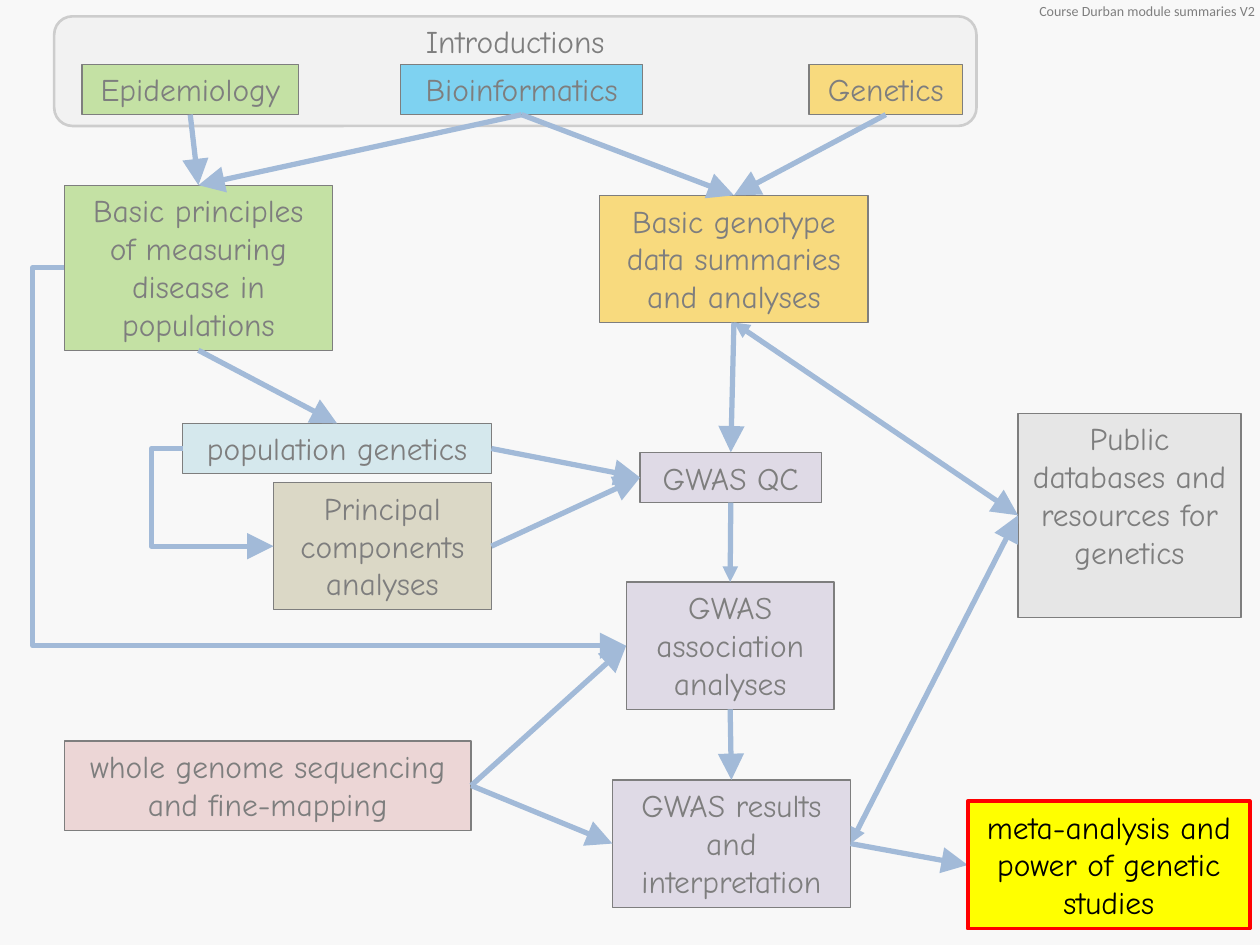
"""Build a flow chart of the modules of a genetics course."""
from lxml import etree
from pptx import Presentation
from pptx.dml.color import RGBColor
from pptx.enum.shapes import MSO_CONNECTOR, MSO_SHAPE
from pptx.enum.text import MSO_ANCHOR, PP_ALIGN
from pptx.oxml.ns import qn
from pptx.util import Inches, Pt

STRAIGHT, ELBOW = MSO_CONNECTOR.STRAIGHT, MSO_CONNECTOR.ELBOW
RECTANGLE, ROUNDED = MSO_SHAPE.RECTANGLE, MSO_SHAPE.ROUNDED_RECTANGLE
TOP_ANCHOR = MSO_ANCHOR.TOP
LEFT_ALIGN, CENTER = PP_ALIGN.LEFT, PP_ALIGN.CENTER
TOP, LEFT, BOTTOM, RIGHT = range(4)

BLACK = RGBColor(0x00, 0x00, 0x00)
RED = RGBColor(0xFF, 0x00, 0x00)
YELLOW = RGBColor(0xFF, 0xFF, 0x00)
PALE_GREY = RGBColor(0xF2, 0xF2, 0xF2)
LIGHT_GREY = RGBColor(0xD9, 0xD9, 0xD9)
MID_GREY = RGBColor(0xA6, 0xA6, 0xA6)
GREEN = RGBColor(0x92, 0xD0, 0x50)
SKY = RGBColor(0x00, 0xB0, 0xF0)
GOLD = RGBColor(0xFF, 0xC0, 0x00)
PALE_BLUE = RGBColor(0xB7, 0xDE, 0xE8)
TAN = RGBColor(0xC4, 0xBD, 0x97)
LILAC = RGBColor(0xCC, 0xC1, 0xDA)
PINK = RGBColor(0xE6, 0xB9, 0xB8)
ARROW_BLUE = RGBColor(0x4B, 0x7E, 0xBC)

ONE_LINE_HEIGHT = 0.4
VEIL_OPACITY = 52
FOOTNOTE = "Course Durban module summaries V2"
INTRODUCTIONS = ("Introductions", (0.43, 0.13, 7.32, 0.87), PALE_GREY)
MODULES = {
    "epidemiology": ("Epidemiology", (0.65, 0.51, 1.72, 0.4), GREEN),
    "bioinformatics": ("Bioinformatics", (3.18, 0.51, 1.92, 0.4), SKY),
    "genetics": ("Genetics", (6.42, 0.51, 1.22, 0.4), GOLD),
    "disease": ("Basic principles of measuring disease in populations",
                (0.51, 1.47, 2.13, 1.31), GREEN),
    "genotype": ("Basic genotype data summaries and analyses",
                 (4.76, 1.55, 2.13, 1.01), GOLD),
    "population": ("population genetics", (1.45, 3.36, 2.45, 0.4), PALE_BLUE),
    "components": ("Principal components analyses", (2.17, 3.83, 1.73, 1.01), TAN),
    "quality": ("GWAS QC", (5.08, 3.59, 1.44, 0.4), LILAC),
    "association": ("GWAS association analyses", (4.97, 4.62, 1.65, 1.01), LILAC),
    "results": ("GWAS results and interpretation", (4.86, 6.19, 1.89, 1.01), LILAC),
    "sequencing": ("whole genome sequencing and fine-mapping",
                   (0.51, 5.88, 3.23, 0.71), PINK),
    "databases": ("Public databases and resources for genetics",
                  (8.08, 3.28, 1.77, 1.62), LIGHT_GREY),
    "meta": ("meta-analysis and power of genetic studies",
             (7.68, 6.36, 2.24, 1.01), YELLOW),
}
ARROWS = [
    ("genetics", BOTTOM, "genotype", TOP, {"tail": "lg"}),
    ("epidemiology", BOTTOM, "disease", TOP, {"tail": "lg"}),
    ("bioinformatics", BOTTOM, "genotype", TOP, {"tail": "lg"}),
    ("bioinformatics", BOTTOM, "disease", TOP, {"tail": "lg"}),
    ("genotype", BOTTOM, "quality", TOP, {"tail": "lg"}),
    ("quality", BOTTOM, "association", TOP, {"tail": "med"}),
    ("association", BOTTOM, "results", TOP, {"tail": "lg"}),
    ("results", RIGHT, "meta", LEFT, {"tail": "lg"}),
    ("population", RIGHT, "quality", LEFT, {"tail": "lg"}),
    ("components", RIGHT, "quality", LEFT, {"tail": "lg"}),
    ("results", RIGHT, "databases", LEFT, {"head": "med", "tail": "lg"}),
    ("genotype", BOTTOM, "databases", LEFT, {"head": "med", "tail": "lg"}),
    ("sequencing", RIGHT, "association", LEFT, {"tail": "lg"}),
    ("sequencing", RIGHT, "results", LEFT, {"tail": "lg"}),
    ("disease", BOTTOM, "population", TOP, {"tail": "lg"}),
    ("population", LEFT, "components", LEFT, {"tail": "lg"}),
    ("disease", LEFT, "association", LEFT, {"tail": "lg"}),
]
ELBOW_REACH = 0.25


def set_values(target, values):
    for name, value in values.items():
        setattr(target, name, value)


def write_text(shape, text, wrap=True, alignment=CENTER, **font):
    frame = shape.text_frame
    set_values(frame, {"text": text, "word_wrap": wrap, "vertical_anchor": TOP_ANCHOR})
    paragraph = frame.paragraphs[0]
    paragraph.alignment = alignment
    values = {"name": "Comic Neue", "size": Pt(18)} | font
    set_values(paragraph.runs[0].font, values)
    paragraph.runs[0].font.color.rgb = BLACK


def add_box(slide, place, fill, kind=RECTANGLE, line=None, width=0.75):
    shape = slide.shapes.add_shape(kind, *map(Inches, place))
    shape.shadow.inherit = False
    shape.fill.solid()
    shape.fill.fore_color.rgb = fill
    if line is None:
        shape.line.fill.background()
    else:
        shape.line.color.rgb = line
        shape.line.width = Pt(width)
    return shape


def add_arrow(slide, start, start_side, end, end_side, sizes):
    bent = start_side == end_side
    connector = slide.shapes.add_connector(ELBOW if bent else STRAIGHT, 0, 0, 0, 0)
    connector.begin_connect(start, start_side)
    connector.end_connect(end, end_side)
    connector.line.color.rgb = ARROW_BLUE
    connector.line.width = Pt(3)
    properties = connector.element.spPr
    if bent:
        share = round(-Inches(ELBOW_REACH) / connector.width * 100000)
        guides = properties.find(qn("a:prstGeom")).get_or_add_avLst()
        etree.SubElement(guides, qn("a:gd"), name="adj1", fmla=f"val {share}")
    for end_name, size in sizes.items():
        etree.SubElement(properties.find(qn("a:ln")), qn(f"a:{end_name}End"),
                         type="triangle", w=size, len=size)
    etree.SubElement(properties, qn("a:effectLst"))


def main():
    presentation = Presentation()
    set_values(presentation, {"slide_width": Inches(10), "slide_height": Inches(7.5)})
    slide = presentation.slides.add_slide(presentation.slide_layouts[6])

    text, place, fill = INTRODUCTIONS
    introductions = add_box(slide, place, fill, ROUNDED, MID_GREY, 1.5)
    introductions.text_frame.margin_top = Inches(0)
    write_text(introductions, text)

    boxes = {}
    for name, (text, place, fill) in MODULES.items():
        border = (RED, 2.25) if name == "meta" else (BLACK, 0.75)
        boxes[name] = add_box(slide, place, fill, RECTANGLE, *border)
        write_text(boxes[name], text, wrap=place[3] > ONE_LINE_HEIGHT)

    for start, start_side, end, end_side, sizes in ARROWS:
        add_arrow(slide, boxes[start], start_side, boxes[end], end_side, sizes)

    footnote = slide.shapes.add_textbox(*map(Inches, (8.15, -0.03, 2.2, 0.24)))
    write_text(footnote, FOOTNOTE, alignment=LEFT_ALIGN, name="Calibri", size=Pt(8))

    veil = add_box(slide, (0, -0.03, 10, 7.53), PALE_GREY)
    color = veil.element.spPr.find(qn("a:solidFill"))[0]
    etree.SubElement(color, qn("a:alpha"), val=str(VEIL_OPACITY * 1000))
    veil.element.addnext(boxes["meta"].element)

    presentation.save("out.pptx")


if __name__ == "__main__":
    main()
